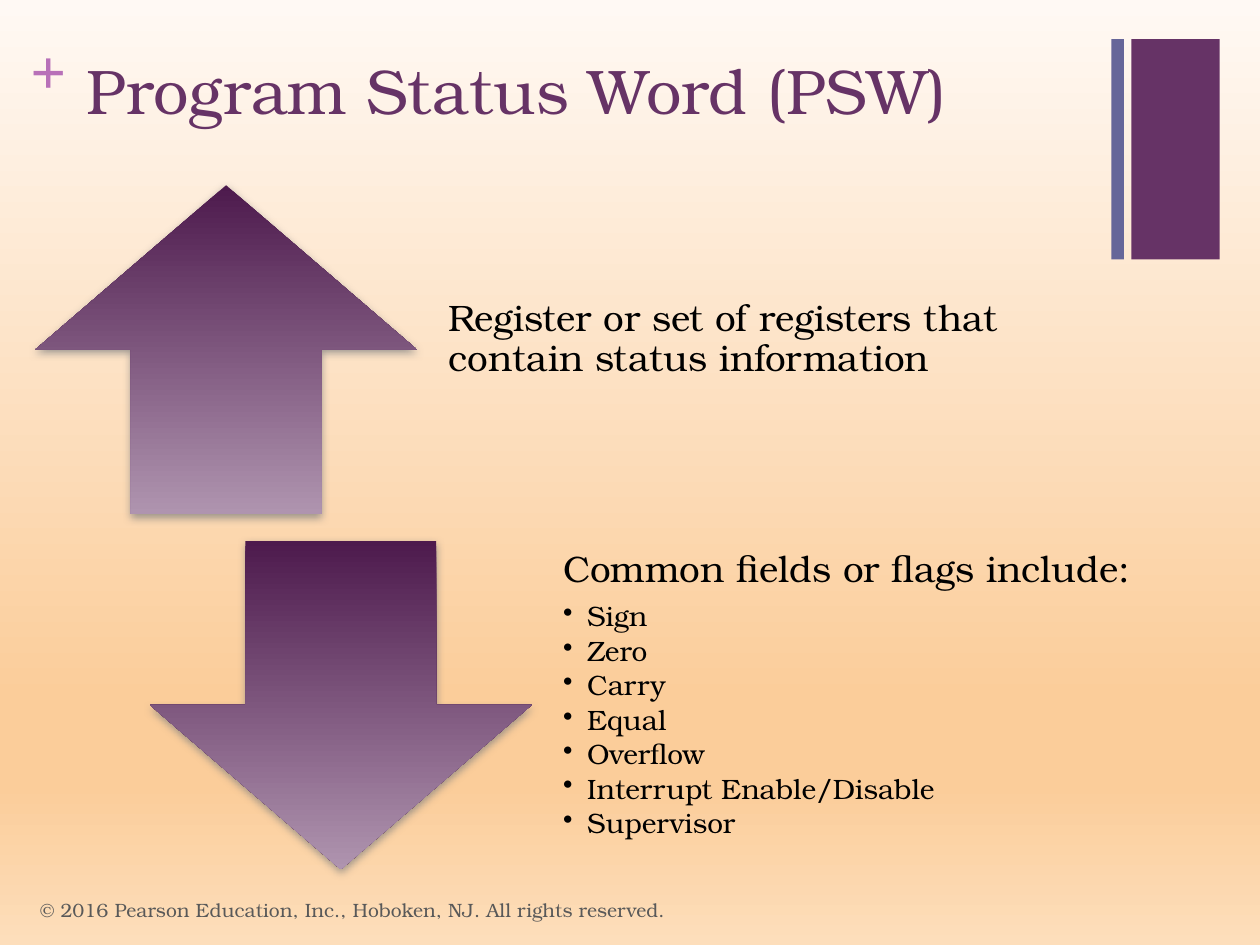
from dataclasses import dataclass

from lxml.etree import SubElement
from pptx import Presentation
from pptx.dml.color import RGBColor
from pptx.enum.shapes import MSO_SHAPE
from pptx.enum.text import MSO_ANCHOR, MSO_AUTO_SIZE, PP_ALIGN
from pptx.oxml.ns import qn
from pptx.util import Inches, Pt


@dataclass(frozen=True)
class Theme:
    font: str = "TeX Gyre Bonum"
    plus_font: str = "Times New Roman"
    purple: str = "663366"
    blue: str = "666699"
    plus: str = "B870B8"
    text: str = "000000"
    footer: str = "595959"
    shadow: str = "808080"
    arrow: tuple = ((0, "4D1A4D"), (100, "AF94AF"))
    background: tuple = ((0, "FFF9F4"), (74, "FBCD9A"), (83, "FBCD9A"), (100, "FDDEBB"))
    title_size: int = 36
    lead_size: int = 21
    bullet_size: int = 16
    footer_size: int = 11


THEME = Theme()
FLAGS = ["Sign", "Zero", "Carry", "Equal", "Overflow",
         "Interrupt Enable/Disable", "Supervisor"]


def set_font(paragraph, size, color, name=THEME.font, bold=False):
    font = paragraph.font
    font.name, font.size, font.bold = name, Pt(size), bold
    font.color.rgb = RGBColor.from_string(color)


def set_gradient(fill, owner, stops):
    """Fill from top to bottom with any number of stops."""
    fill.gradient()
    fill.gradient_angle = 270
    stop_list = next(owner.iter(qn("a:gsLst")))
    for stop in list(stop_list):
        stop_list.remove(stop)
    for position, color in stops:
        stop = SubElement(stop_list, qn("a:gs"), pos=str(position * 1000))
        SubElement(stop, qn("a:srgbClr"), val=color)


def add_shadow(shape):
    shape.shadow.inherit = False
    effects = shape.element.spPr.find(qn("a:effectLst"))
    shadow = SubElement(effects, qn("a:outerShdw"), blurRad=str(Pt(5)),
                        dist=str(Pt(2)), dir="5400000", rotWithShape="0")
    color = SubElement(shadow, qn("a:srgbClr"), val=THEME.shadow)
    SubElement(color, qn("a:alpha"), val="75000")


def add_text_box(slide, box, margins=None, anchor=MSO_ANCHOR.TOP):
    frame = slide.shapes.add_textbox(*map(Inches, box)).text_frame
    frame.word_wrap = True
    frame.vertical_anchor = anchor
    if margins:
        (frame.margin_left, frame.margin_top,
         frame.margin_right, frame.margin_bottom) = map(Inches, margins)
    return frame


def add_bullet(paragraph):
    properties = paragraph._p.get_or_add_pPr()
    properties.set("marL", str(Inches(0.19)))
    properties.set("indent", str(Inches(-0.19)))
    SubElement(properties, qn("a:buChar"), char="•")


def add_decoration(slide, box):
    """Wide purple bar with a thin blue bar on its left."""
    left, top, width, height = box
    thin = 0.1
    for x, bar_width, color in ((left + width - 0.7, 0.7, THEME.purple),
                                (left, thin, THEME.blue)):
        bar = slide.shapes.add_shape(
            MSO_SHAPE.RECTANGLE, *map(Inches, (x, top, bar_width, height)))
        bar.shadow.inherit = False
        bar.fill.solid()
        bar.fill.fore_color.rgb = RGBColor.from_string(color)
        bar.line.fill.background()


def add_title(slide, box, text):
    title = slide.shapes.title
    title.left, title.top, title.width, title.height = map(Inches, box)
    frame = title.text_frame
    frame.text = text
    frame.auto_size = MSO_AUTO_SIZE.NONE
    frame.vertical_anchor = MSO_ANCHOR.TOP
    paragraph = frame.paragraphs[0]
    paragraph.alignment = PP_ALIGN.LEFT
    set_font(paragraph, THEME.title_size, THEME.purple)


def add_plus(slide, box):
    frame = add_text_box(slide, box, margins=(0, 0, 0, 0))
    frame.text = "+"
    set_font(frame.paragraphs[0], THEME.title_size, THEME.plus, THEME.plus_font, bold=True)


def add_arrow_row(slide, box, arrow_type, lead, bullets=()):
    """Arrow on the left, lead sentence and optional bullets on the right."""
    left, top, width, height = box
    arrow_width, gap = 3.03, 0.09
    arrow = slide.shapes.add_shape(
        arrow_type, *map(Inches, (left, top, arrow_width, height)))
    set_gradient(arrow.fill, arrow.element, THEME.arrow)
    arrow.line.fill.background()
    add_shadow(arrow)

    text_offset = arrow_width + gap
    frame = add_text_box(slide, (left + text_offset, top, width - text_offset, height),
                         margins=(0.16, 0, 0.16, 0.16), anchor=MSO_ANCHOR.MIDDLE)
    frame.text = "\n".join([lead, *bullets])
    for index, paragraph in enumerate(frame.paragraphs):
        size, after = (THEME.bullet_size, 0.15) if index else (THEME.lead_size, 0.35)
        paragraph.line_spacing = 0.9
        paragraph.space_after = Pt(size * after)
        if index:
            paragraph.level = 1
            add_bullet(paragraph)
        set_font(paragraph, size, THEME.text)


def add_footer(slide, box, text):
    frame = add_text_box(slide, box, anchor=MSO_ANCHOR.MIDDLE)
    frame.text = text
    set_font(frame.paragraphs[0], THEME.footer_size, THEME.footer)


def main():
    presentation = Presentation()
    presentation.slide_width, presentation.slide_height = Inches(10), Inches(7.5)
    slide = presentation.slides.add_slide(presentation.slide_layouts[5])
    set_gradient(slide.background.fill, slide.element, THEME.background)

    # Heading
    add_decoration(slide, (8.82, 0.31, 0.86, 1.75))
    add_plus(slide, (0.24, 0.25, 0.29, 0.61))
    add_title(slide, (0.59, 0.36, 8.26, 1.22), "Program Status Word (PSW)")

    # Arrow rows
    add_arrow_row(slide, (0.28, 1.47, 8.27, 2.61), MSO_SHAPE.UP_ARROW,
                  "Register or set of registers that contain status information")
    add_arrow_row(slide, (1.19, 4.29, 8.27, 2.61), MSO_SHAPE.DOWN_ARROW,
                  "Common fields or flags include:", FLAGS)

    # Copyright line
    add_footer(slide, (0.22, 7.02, 6.7, 0.4),
               "© 2016 Pearson Education, Inc., Hoboken, NJ. All rights reserved.")
    presentation.save("out.pptx")


if __name__ == "__main__":
    main()
